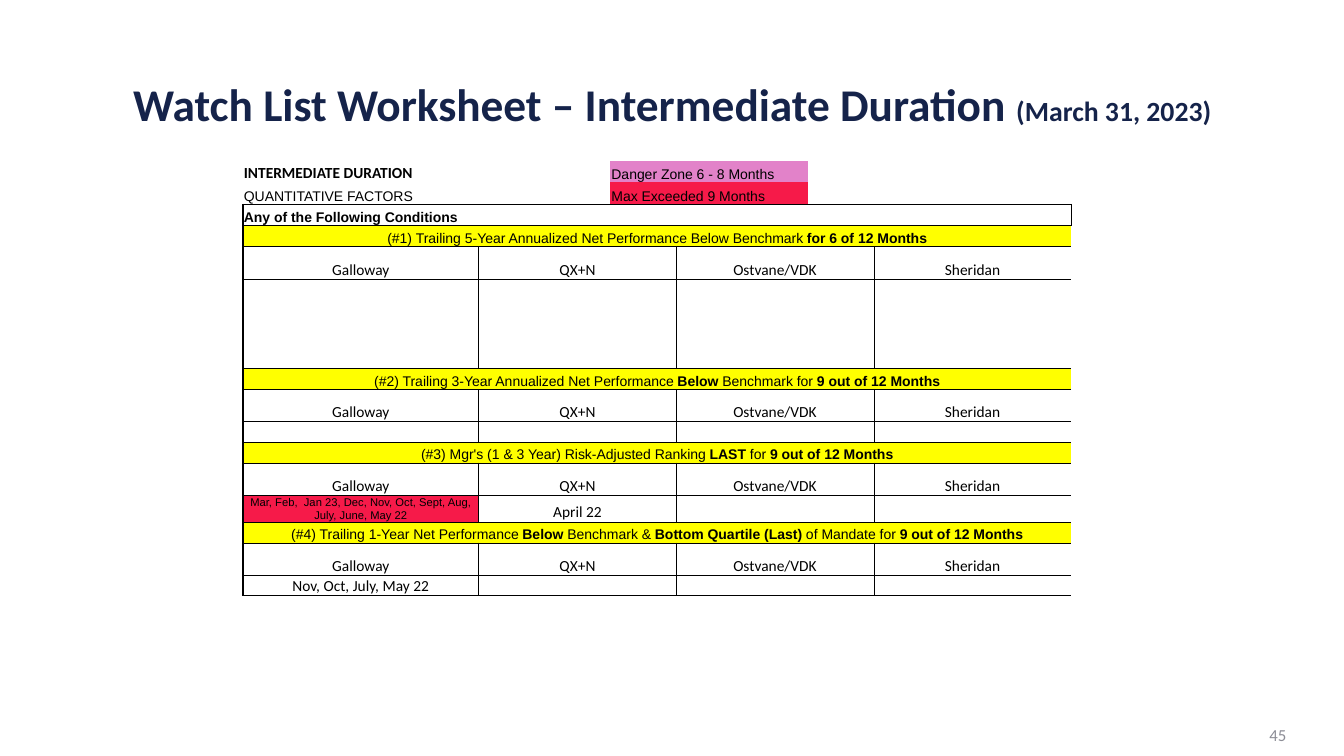
"""Build the watch list worksheet slide for intermediate duration managers."""
from lxml.etree import SubElement
from pptx import Presentation
from pptx.dml.color import RGBColor
from pptx.enum.text import MSO_ANCHOR, MSO_AUTO_SIZE, PP_ALIGN
from pptx.oxml.ns import qn
from pptx.util import Pt

NAVY, GRAY, BLACK = "15234A", "8C8D96", "000000"
YELLOW, RED, PINK = "FFFF00", "F61A49", "E282C9"

HEADING = {"name": "Calibri", "size": Pt(32.4), "bold": True}
HEADING_DATE = {"name": "Calibri", "size": Pt(19.8), "bold": True}
NUMBER = {"name": "Calibri", "size": Pt(12), "bold": False}
NAME = {"name": "Calibri", "size": Pt(11), "bold": False}
NAME_BOLD = {"name": "Calibri", "size": Pt(11), "bold": True}
PLAIN = {"name": "Arial", "size": Pt(10), "bold": False}
BOLD = {"name": "Arial", "size": Pt(10), "bold": True}
SMALL = {"name": "Arial", "size": Pt(8), "bold": False}

TITLE = [("Watch List Worksheet – Intermediate Duration ", HEADING),
         ("(March 31, 2023)", HEADING_DATE)]
PAGE = [("45", NUMBER)]
MANAGERS = ["Galloway", "QX+N", "Ostvane/VDK", "Sheridan"]

LEGEND = [
    (15, ("INTERMEDIATE DURATION", NAME_BOLD), ("Danger Zone 6 - 8 Months", PINK)),
    (15.9, ("QUANTITATIVE FACTORS", PLAIN), ("Max Exceeded 9 Months", RED)),
]
CONDITIONS_HEADING = ("Any of the Following Conditions", BOLD)
CONDITIONS = [
    {"rule": [("(#1) Trailing 5-Year Annualized Net Performance Below Benchmark ", PLAIN),
              ("for 6 of 12 Months", BOLD)],
     "findings": {}, "height": 63.4},
    {"rule": [("(#2) Trailing 3-Year Annualized Net Performance ", PLAIN), ("Below", BOLD),
              (" Benchmark for ", PLAIN), ("9 out of 12 Months", BOLD)],
     "findings": {}, "height": 14.4},
    {"rule": [("(#3) Mgr's (1 & 3 Year) Risk-Adjusted Ranking ", PLAIN), ("LAST", BOLD),
              (" for ", PLAIN), ("9 out of 12 Months", BOLD)],
     "findings": {
         0: ("Mar, Feb,  Jan 23, Dec, Nov, Oct, Sept, Aug, July, June, May 22", SMALL, RED),
         1: ("April 22", NAME, None)},
     "height": 18.7},
    {"rule": [("(#4) Trailing 1-Year Net Performance ", PLAIN), ("Below", BOLD),
              (" Benchmark & ", PLAIN), ("Bottom Quartile (Last)", BOLD),
              (" of Mandate for ", PLAIN), ("9 out of 12 Months", BOLD)],
     "findings": {0: ("Nov, Oct, July, May 22", NAME, None)}, "height": 14.4},
]

COLUMNS = [168.5] + [47.04] * 9
BAND, MANAGER_ROW = 15.1, 23.3
CELL_FORMAT = {"margin_left": Pt(0.7), "margin_right": Pt(0.7), "margin_top": Pt(0.7),
               "margin_bottom": 0, "vertical_anchor": MSO_ANCHOR.BOTTOM}


def color(value):
    return RGBColor.from_string(value)


def write(paragraph, runs, ink, align):
    paragraph.alignment = align
    for text, style in runs:
        run = paragraph.add_run()
        run.text = text
        run.font.color.rgb = color(ink)
        for attribute, value in style.items():
            setattr(run.font, attribute, value)


def draw_borders(cell, widths):
    properties = cell._tc.get_or_add_tcPr()
    for side in "LRTB":
        width = widths.get(side, 0)
        line = SubElement(properties, qn("a:ln" + side), w=str(Pt(width)))
        if width:
            SubElement(SubElement(line, qn("a:solidFill")), qn("a:srgbClr"), val=BLACK)
        else:
            SubElement(line, qn("a:noFill"))


def worksheet_rows():
    """Return (height, cells) rows; each cell is (span, runs, align, fill)."""
    blank = (1, [], PP_ALIGN.LEFT, None)
    rows = [(height, [(1, [label], PP_ALIGN.LEFT, None), blank, blank,
                      (3, [(zone, PLAIN)], PP_ALIGN.LEFT, fill)] + [blank] * 4)
            for height, label, (zone, fill) in LEGEND]
    rows.append((BAND, [(1, [CONDITIONS_HEADING], PP_ALIGN.LEFT, None)] + [blank] * 9))
    spans = [1, 3, 3, 3]
    for condition in CONDITIONS:
        rows.append((BAND, [(10, condition["rule"], PP_ALIGN.CENTER, YELLOW)]))
        rows.append((MANAGER_ROW, [(span, [(manager, NAME)], PP_ALIGN.CENTER, None)
                                   for span, manager in zip(spans, MANAGERS)]))
        findings = []
        for index, span in enumerate(spans):
            text, style, fill = condition["findings"].get(index, ("", NAME, None))
            findings.append((span, [(text, style)] if text else [], PP_ALIGN.CENTER, fill))
        rows.append((condition["height"], findings))
    return rows


def border_widths(row, column, first, last, row_count):
    top_row, last_column = len(LEGEND), len(COLUMNS) - 1
    if row < top_row:
        return {"B": 1} if row == top_row - 1 else {}
    widths = {"T": 1 if row == top_row else 0.5, "B": 1 if row == row_count - 1 else 0.5}
    inner = 0 if row == top_row else 0.5
    if column == first:
        widths["L"] = 1 if column == 0 else inner
    if column == last:
        widths["R"] = 1 if column == last_column else inner
    return widths


def add_worksheet(slide):
    rows = worksheet_rows()
    table = slide.shapes.add_table(len(rows), len(COLUMNS), Pt(173.5), Pt(115.2),
                                   Pt(sum(COLUMNS)), Pt(sum(row[0] for row in rows))).table
    table.first_row = table.horz_banding = False
    for column, width in zip(table.columns, COLUMNS):
        column.width = Pt(width)
    for row, (height, cells) in enumerate(rows):
        table.rows[row].height = Pt(height)
        first = 0
        for span, runs, align, fill in cells:
            last = first + span - 1
            for column in range(first, last + 1):
                cell = table.cell(row, column)
                draw_borders(cell, border_widths(row, column, first, last, len(rows)))
                for attribute, value in CELL_FORMAT.items():
                    setattr(cell, attribute, value)
                if fill:
                    cell.fill.solid()
                    cell.fill.fore_color.rgb = color(fill)
                else:
                    cell.fill.background()
                paragraph = cell.text_frame.paragraphs[0]
                if column == first and runs:
                    write(paragraph, runs, BLACK, align)
                else:
                    SubElement(paragraph._p, qn("a:endParaRPr"), sz="800")
            if span > 1:
                table.cell(row, first).merge(table.cell(row, last))
            first = last + 1


def place(shape, left, top, width, height):
    box = {"left": left, "top": top, "width": width, "height": height}
    for attribute, value in box.items():
        setattr(shape, attribute, Pt(value))
    frame = shape.text_frame
    frame.word_wrap = True
    frame.auto_size = MSO_AUTO_SIZE.NONE
    frame.vertical_anchor = MSO_ANCHOR.MIDDLE
    return frame.paragraphs[0]


def main():
    deck = Presentation()
    deck.slide_width, deck.slide_height = Pt(960), Pt(540)
    slide = deck.slides.add_slide(deck.slide_layouts[5])
    heading = place(slide.shapes.title, 66.2, 50.4, 828, 51.1)
    heading.line_spacing = 0.9
    write(heading, TITLE, NAVY, PP_ALIGN.CENTER)
    add_worksheet(slide)
    page = place(slide.shapes.add_textbox(0, 0, 0, 0), 710, 510.5, 216, 28.8)
    write(page, PAGE, GRAY, PP_ALIGN.RIGHT)
    deck.save("out.pptx")


if __name__ == "__main__":
    main()
